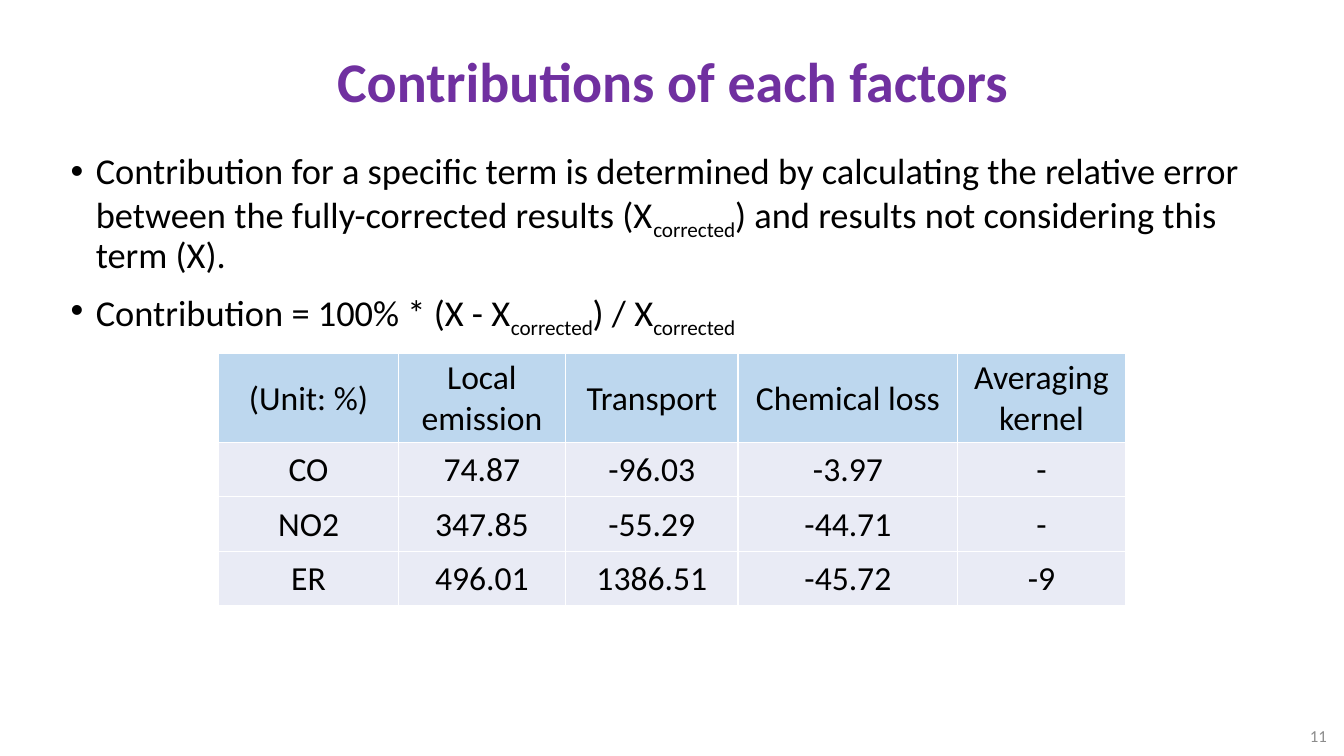
from dataclasses import dataclass

from pptx import Presentation
from pptx.dml.color import RGBColor
from pptx.enum import text
from pptx.oxml import parse_xml
from pptx.oxml import ns
from pptx.util import Inches, Pt


@dataclass(frozen=True)
class Theme:
    font: str = "Calibri"
    title_color: str = "7030A0"
    text_color: str = "000000"
    number_color: str = "8C8C8C"
    header_fill: str = "BDD7EE"
    row_fill: str = "E9EBF5"
    border_color: str = "FFFFFF"
    title_size: int = 40
    body_size: int = 26
    table_size: int = 24
    number_size: int = 12


THEME = Theme()

# Each bullet is a list of (text, is_subscript) pieces.
BULLETS = [
    [("Contribution for a specific term is determined by calculating the relative error "
      "between the fully-corrected results (X", False),
     ("corrected", True),
     (") and results not considering this term (X).", False)],
    [("Contribution = 100% * (X - X", False),
     ("corrected", True),
     (") / X", False),
     ("corrected", True)],
]

CONTRIBUTIONS = [
    ["(Unit: %)", "Local emission", "Transport", "Chemical loss", "Averaging kernel"],
    ["CO", "74.87", "-96.03", "-3.97", "-"],
    ["NO2", "347.85", "-55.29", "-44.71", "-"],
    ["ER", "496.01", "1386.51", "-45.72", "-9"],
]
COLUMN_WIDTHS = [1.78, 1.66, 1.71, 2.18, 1.66]
ROW_HEIGHTS = [0.88, 0.54, 0.54, 0.54]


def place(shape, box):
    shape.left, shape.top, shape.width, shape.height = map(Inches, box)


def format_runs(paragraph, size, color, bold=False):
    for run in paragraph.runs:
        run.font.name = THEME.font
        run.font.size = Pt(size)
        run.font.bold = bold
        run.font.color.rgb = RGBColor.from_string(color)


def add_title(slide, box):
    title = slide.shapes.title
    place(title, box)
    frame = title.text_frame
    frame.text = "Contributions of each factors"
    frame.auto_size = text.MSO_AUTO_SIZE.NONE
    frame.vertical_anchor = text.MSO_ANCHOR.MIDDLE
    paragraph = frame.paragraphs[0]
    paragraph.alignment = text.PP_ALIGN.CENTER
    paragraph.line_spacing = 0.9
    format_runs(paragraph, THEME.title_size, THEME.title_color, bold=True)


def add_bullets(slide, box):
    body = slide.placeholders[1]
    place(body, box)
    frame = body.text_frame
    frame.auto_size = text.MSO_AUTO_SIZE.NONE
    for index, pieces in enumerate(BULLETS):
        paragraph = frame.add_paragraph() if index else frame.paragraphs[0]
        paragraph.line_spacing = 0.9
        paragraph.space_before = Pt(10)
        properties = paragraph._p.get_or_add_pPr()
        properties.set("marL", str(Inches(0.25)))
        properties.set("indent", str(Inches(-0.25)))
        for wording, is_subscript in pieces:
            run = paragraph.add_run()
            run.text = wording
            if is_subscript:
                run._r.get_or_add_rPr().set("baseline", "-25000")
        format_runs(paragraph, THEME.body_size, THEME.text_color)


def add_borders(cell):
    properties = cell._tc.get_or_add_tcPr()
    for side in ("lnL", "lnR", "lnT", "lnB"):
        properties.append(parse_xml(
            f'<a:{side} {ns.nsdecls("a")} w="{Pt(1)}"><a:solidFill>'
            f'<a:srgbClr val="{THEME.border_color}"/></a:solidFill></a:{side}>'))


def fill_cell(cell, wording, fill):
    add_borders(cell)
    cell.fill.solid()
    cell.fill.fore_color.rgb = RGBColor.from_string(fill)
    cell.margin_left = cell.margin_right = cell.margin_top = Inches(0.01)
    cell.margin_bottom = 0
    cell.vertical_anchor = text.MSO_ANCHOR.MIDDLE
    cell.text_frame.text = wording
    paragraph = cell.text_frame.paragraphs[0]
    paragraph.alignment = text.PP_ALIGN.CENTER
    format_runs(paragraph, THEME.table_size, THEME.text_color)


def add_contribution_table(slide, left, top):
    table = slide.shapes.add_table(
        len(ROW_HEIGHTS), len(COLUMN_WIDTHS), Inches(left), Inches(top),
        Inches(sum(COLUMN_WIDTHS)), Inches(sum(ROW_HEIGHTS))).table
    for column, width in zip(table.columns, COLUMN_WIDTHS):
        column.width = Inches(width)
    for row_index, values in enumerate(CONTRIBUTIONS):
        row = table.rows[row_index]
        row.height = Inches(ROW_HEIGHTS[row_index])
        fill = THEME.row_fill if row_index else THEME.header_fill
        for cell, wording in zip(row.cells, values):
            fill_cell(cell, wording, fill)


def add_slide_number(slide, box):
    frame = slide.shapes.add_textbox(*map(Inches, box)).text_frame
    frame.text = "11"
    frame.word_wrap = True
    frame.vertical_anchor = text.MSO_ANCHOR.MIDDLE
    paragraph = frame.paragraphs[0]
    paragraph.alignment = text.PP_ALIGN.RIGHT
    format_runs(paragraph, THEME.number_size, THEME.number_color)


def main():
    presentation = Presentation()
    presentation.slide_width = Inches(13.33)
    presentation.slide_height = Inches(7.5)
    slide = presentation.slides.add_slide(presentation.slide_layouts[1])
    add_title(slide, (0.92, 0.35, 11.5, 0.98))
    add_contribution_table(slide, 2.17, 3.51)
    add_bullets(slide, (0.6, 1.47, 12.13, 1.9))
    add_slide_number(slide, (10.26, 7.1, 3, 0.4))
    presentation.save("out.pptx")


if __name__ == "__main__":
    main()
